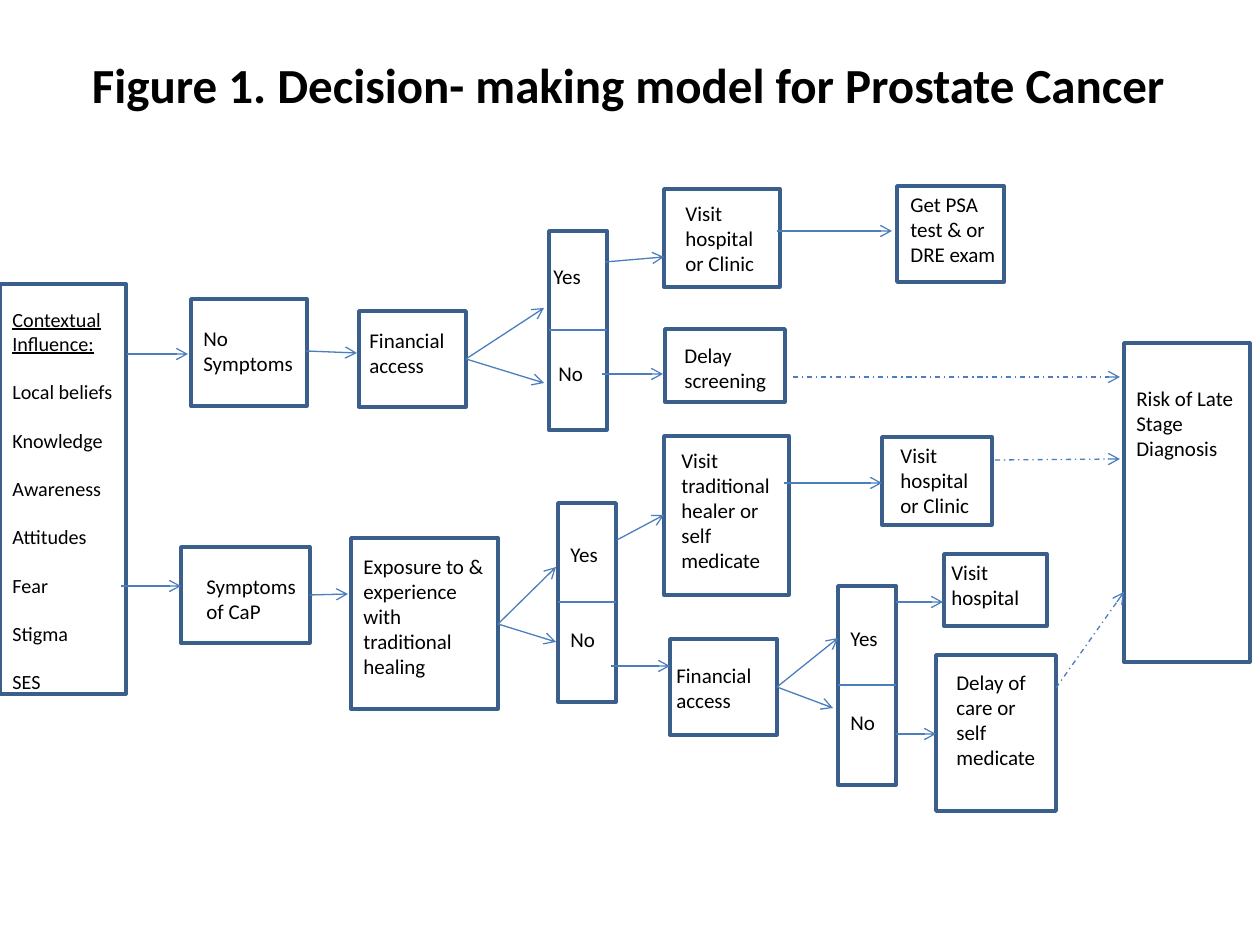
from dataclasses import dataclass

from lxml.etree import SubElement
from pptx import Presentation
from pptx.dml.color import RGBColor
from pptx.enum.dml import MSO_LINE
from pptx.enum.shapes import MSO_CONNECTOR, MSO_SHAPE
from pptx.enum.text import MSO_ANCHOR, MSO_AUTO_SIZE, PP_ALIGN
from pptx.oxml.ns import qn
from pptx.util import Emu, Pt

PX_PER_INCH = 126
TITLE_ONLY = 5


@dataclass(frozen=True)
class Theme:
    font: str = "Calibri"
    text: RGBColor = RGBColor(0x00, 0x00, 0x00)
    frame: RGBColor = RGBColor(0x3A, 0x5F, 0x8C)
    arrow: RGBColor = RGBColor(0x4B, 0x7E, 0xBC)
    title_size: float = 28
    label_size: float = 12
    list_size: float = 11.5
    frame_width: float = 2
    arrow_width: float = 0.75


THEME = Theme()

# Each node: text, frame (left, top, width, height), label (left, top, width, height)
NODES = [
    ("No Symptoms", (191, 299, 116, 107), (191, 319, 118, 63)),
    ("Financial access", (359, 311, 107, 96), (357, 321, 102, 63)),
    ("Visit hospital or Clinic", (664, 189, 116, 98), (673, 194, 108, 89)),
    ("Get PSA test & or DRE exam", (897, 186, 107, 96), (898, 185, 116, 89)),
    ("Delay screening", (665, 329, 120, 73), (672, 336, 113, 63)),
    ("Symptoms of CaP", (181, 547, 129, 96), (194, 567, 116, 63)),
    ("Exposure to & experience with traditional healing",
     (351, 538, 147, 171), (351, 547, 148, 140)),
    ("Visit traditional healer or self medicate",
     (664, 436, 125, 159), (669, 441, 115, 140)),
    ("Visit hospital or Clinic", (882, 437, 110, 88), (888, 436, 108, 89)),
    ("Financial access", (670, 639, 107, 96), (664, 656, 102, 63)),
    ("Visit hospital", (944, 554, 103, 72), (939, 553, 116, 63)),
    ("Delay of care or self medicate", (936, 655, 120, 156), (944, 663, 113, 115)),
    ("Risk of Late Stage Diagnosis", (1124, 343, 126, 319), (1124, 379, 126, 89)),
]

# Each decision: left and top of the frame, then left and top of its Yes and No
DECISIONS = [
    ((549, 231), (541, 257), (546, 354)),
    ((558, 503), (558, 535), (558, 620)),
    ((838, 586), (838, 619), (838, 703)),
]
DECISION_WIDTH, DECISION_HEIGHT = 58, 199

INFLUENCES = ["Local beliefs", "Knowledge", "Awareness", "Attitudes",
              "Fear", "Stigma", "SES"]

# Arrows: start x, start y, end x, end y
ARROWS = [
    # No symptoms
    (127, 354, 188, 354), (306, 351, 357, 353),
    (466, 359, 544, 308), (466, 359, 544, 383),
    (605, 262, 664, 257), (602, 374, 663, 374), (777, 231, 892, 231),
    # Symptoms
    (121, 586, 181, 586), (309, 595, 348, 594),
    (498, 624, 556, 567), (498, 624, 556, 642),
    (617, 540, 664, 515), (611, 666, 670, 666), (784, 483, 882, 483),
    (777, 687, 838, 638), (777, 687, 833, 708),
    (896, 602, 943, 602), (896, 734, 936, 734),
]
DASHED_ARROWS = [
    (793, 377, 1120, 377), (995, 460, 1120, 459), (1056, 688, 1124, 592),
]


def px(length):
    return Emu(round(length * 914400 / PX_PER_INCH))


def write_text(paragraph, text, size=THEME.label_size, bold=False, underline=False):
    run = paragraph.add_run()
    run.text = text
    font = run.font
    font.name = THEME.font
    font.size = Pt(size)
    font.bold = bold
    font.underline = underline
    font.color.rgb = THEME.text


def add_frame(slide, bounds):
    shape = slide.shapes.add_shape(MSO_SHAPE.RECTANGLE, *map(px, bounds))
    shape.shadow.inherit = False
    shape.fill.background()
    shape.line.color.rgb = THEME.frame
    shape.line.width = Pt(THEME.frame_width)


def add_text_frame(slide, bounds):
    text_frame = slide.shapes.add_textbox(*map(px, bounds)).text_frame
    text_frame.word_wrap = True
    return text_frame


def add_label(slide, text, bounds):
    write_text(add_text_frame(slide, bounds).paragraphs[0], text)


def add_line(slide, ends, arrow=True, dashed=False):
    connector = slide.shapes.add_connector(MSO_CONNECTOR.STRAIGHT, *map(px, ends))
    connector.line.color.rgb = THEME.arrow
    connector.line.width = Pt(THEME.arrow_width)
    if dashed:
        connector.line.dash_style = MSO_LINE.DASH_DOT
    properties = connector._element.spPr
    if arrow:
        SubElement(properties.find(qn("a:ln")), qn("a:tailEnd"), type="arrow")
    SubElement(properties, qn("a:effectLst"))


def add_decision(slide, corner, yes, no):
    left, top = corner
    middle = top + DECISION_HEIGHT // 2
    add_frame(slide, (left, top, DECISION_WIDTH, DECISION_HEIGHT))
    add_line(slide, (left, middle, left + DECISION_WIDTH, middle), arrow=False)
    add_label(slide, "Yes", (*yes, DECISION_WIDTH, 38))
    add_label(slide, "No", (*no, DECISION_WIDTH, 38))


def add_influences(slide):
    add_frame(slide, (0, 284, 126, 410))
    text_frame = add_text_frame(slide, (0, 301, 158, 403))
    write_text(text_frame.paragraphs[0], "Contextual Influence:",
               size=THEME.list_size, underline=True)
    for influence in INFLUENCES:
        paragraph = text_frame.add_paragraph()
        paragraph.space_before = Pt(13.8)
        write_text(paragraph, influence, size=THEME.list_size)


def set_title(slide, text):
    title = slide.shapes.title
    title.left, title.top, title.width, title.height = map(px, (76, 39, 1104, 71))
    text_frame = title.text_frame
    text_frame.auto_size = MSO_AUTO_SIZE.NONE
    text_frame.vertical_anchor = MSO_ANCHOR.TOP
    text_frame.margin_left = text_frame.margin_right = 0
    paragraph = text_frame.paragraphs[0]
    paragraph.alignment = PP_ALIGN.CENTER
    paragraph.line_spacing = 1.15
    write_text(paragraph, text, size=THEME.title_size, bold=True)


def main():
    presentation = Presentation()
    presentation.slide_width = px(1260)
    presentation.slide_height = px(945)
    slide = presentation.slides.add_slide(presentation.slide_layouts[TITLE_ONLY])
    set_title(slide, "Figure 1. Decision- making model for Prostate Cancer")

    # Boxes
    add_influences(slide)
    for text, frame, label in NODES:
        add_frame(slide, frame)
        add_label(slide, text, label)
    for decision in DECISIONS:
        add_decision(slide, *decision)

    # Arrows
    for ends in ARROWS:
        add_line(slide, ends)
    for ends in DASHED_ARROWS:
        add_line(slide, ends, dashed=True)

    presentation.save("out.pptx")


if __name__ == "__main__":
    main()
